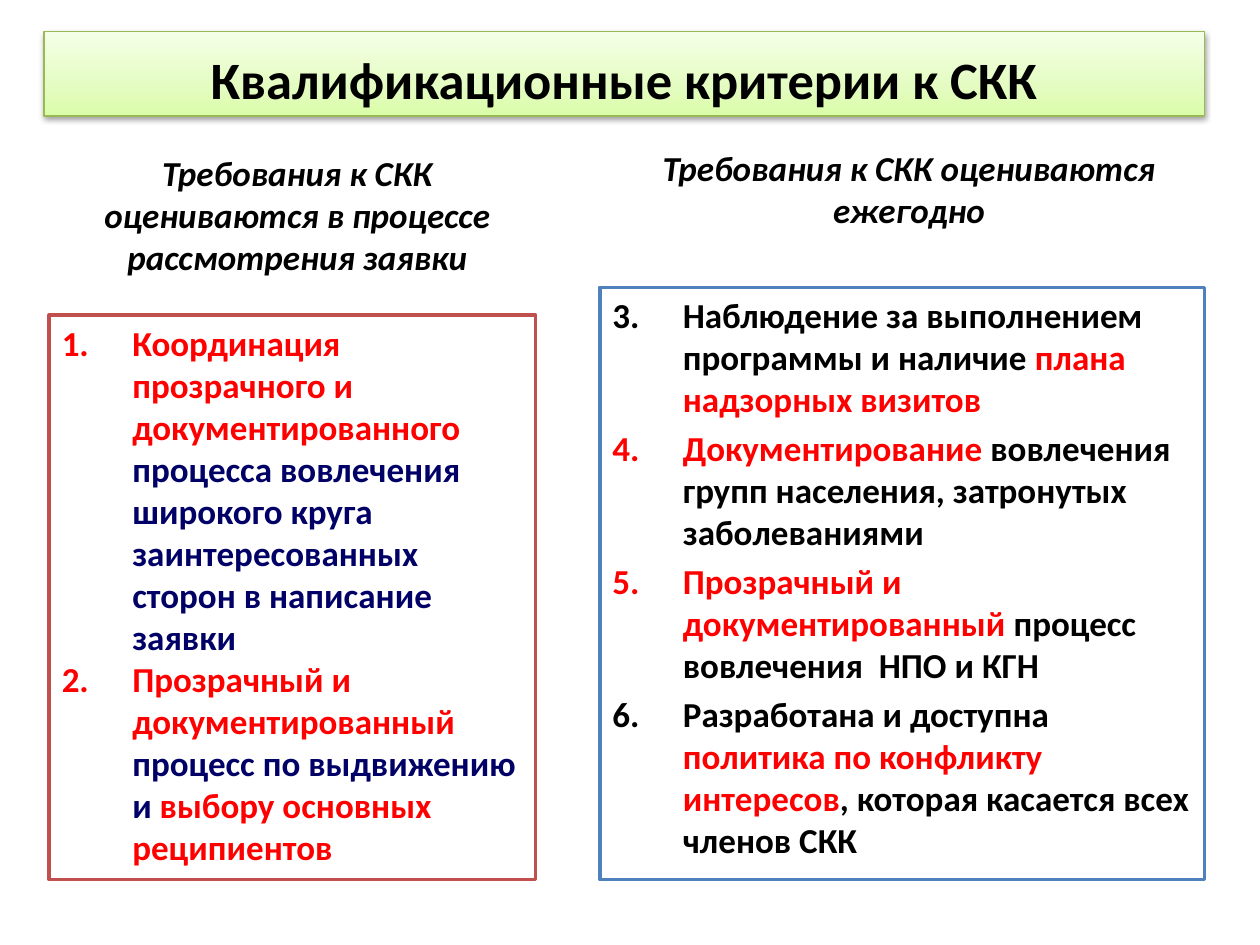
from lxml.etree import SubElement
from pptx import Presentation
from pptx.dml.color import RGBColor
from pptx.enum.text import MSO_ANCHOR, MSO_AUTO_SIZE, PP_ALIGN
from pptx.oxml import parse_xml
from pptx.oxml.ns import nsdecls, qn
from pptx.util import Inches, Pt

BLACK, RED, NAVY = "000000", "FF0000", "000066"


def paint(color, code):
    color.rgb = RGBColor.from_string(code)


def place(shape, box):
    shape.left, shape.top, shape.width, shape.height = map(Inches, box)
    frame = shape.text_frame
    frame.word_wrap = True
    frame.auto_size = MSO_AUTO_SIZE.NONE
    frame.vertical_anchor = MSO_ANCHOR.TOP
    return frame


def border(shape, code, width):
    paint(shape.line.color, code)
    shape.line.width = Pt(width)


def add_run(para, text, size=20, code=BLACK, italic=False):
    run = para.add_run()
    run.text = text
    font = run.font
    font.name, font.size = "Calibri", Pt(size)
    font.bold, font.italic = True, italic
    paint(font.color, code)


def add_title(shape, box, text):
    frame = place(shape, box)
    frame.vertical_anchor = MSO_ANCHOR.BOTTOM
    frame.margin_left = frame.margin_right = 0
    para = frame.paragraphs[0]
    para.alignment = PP_ALIGN.CENTER
    add_run(para, text, 30)

    # Green gradient rising from the bottom edge
    props = shape.element.spPr
    stops = "".join(
        f'<a:gs pos="{pos * 1000}"><a:srgbClr val="{code}"/></a:gs>'
        for pos, code in ((0, "DAFDA7"), (35, "E4FCC2"), (100, "F5FFE7")))
    props.append(parse_xml(
        f'<a:gradFill {nsdecls("a")} rotWithShape="1"><a:gsLst>{stops}</a:gsLst>'
        '<a:lin ang="16200000" scaled="0"/></a:gradFill>'))
    border(shape, "98B955", 0.75)

    # Soft shadow below
    props.append(parse_xml(
        f'<a:effectLst {nsdecls("a")}><a:outerShdw blurRad="{Pt(3.1)}" '
        f'dist="{Pt(1.6)}" dir="5400000" rotWithShape="0"><a:srgbClr val="000000">'
        '<a:alpha val="38000"/></a:srgbClr></a:outerShdw></a:effectLst>'))


def add_head(shape, box, text):
    para = place(shape, box).paragraphs[0]
    para.alignment = PP_ALIGN.CENTER
    para.space_before = Pt(0)
    add_run(para, text, italic=True)


def add_list(shape, box, edge, items, start, gap):
    frame = place(shape, box)
    shape.fill.solid()
    paint(shape.fill.fore_color, "FFFFFF")
    border(shape, edge, 2)
    for i, item in enumerate(items):
        para = frame.add_paragraph() if i else frame.paragraphs[0]
        para.space_before = Pt(gap)
        # Hanging number
        props = para._p.get_or_add_pPr()
        props.set("marL", str(Inches(0.56)))
        props.set("indent", str(-Inches(0.56)))
        SubElement(props, qn("a:buFont"), typeface="+mj-lt")
        SubElement(props, qn("a:buAutoNum"), type="arabicPeriod", startAt=str(start))
        for text, code in item:
            add_run(para, text, code=code)


def main():
    deck = Presentation()
    deck.slide_width, deck.slide_height = Inches(10), Inches(7.5)
    slide = deck.slides.add_slide(deck.slide_layouts.get_by_name("Comparison"))
    title, head1, list1, head2, list2 = slide.placeholders

    add_title(title, (0.35, 0.25, 9.21, 0.67), "Квалификационные критерии к СКК")

    # Left column: application review
    add_head(head1, (0.43, 1.15, 3.86, 1.11),
             "Требования к СКК оцениваются в процессе рассмотрения заявки")
    add_list(list1, (0.39, 2.5, 3.86, 4.48), "C0504D", [
        [("Координация прозрачного и документированного ", RED),
         ("процесса вовлечения широкого круга заинтересованных сторон "
          "в написание заявки", NAVY)],
        [("Прозрачный и документированный ", RED),
         ("процесс по выдвижению и ", NAVY),
         ("выбору основных реципиентов", RED)],
    ], start=1, gap=0)

    # Right column: yearly review
    add_head(head2, (4.93, 1.11, 4.57, 1.08),
             "Требования к СКК оцениваются ежегодно")
    add_list(list2, (4.76, 2.28, 4.8, 4.7), "4F81BD", [
        [("Наблюдение за выполнением программы и наличие ", BLACK),
         ("плана надзорных визитов", RED)],
        [("Документирование ", RED),
         ("вовлечения групп населения, затронутых заболеваниями", BLACK)],
        [("Прозрачный и документированный ", RED),
         ("процесс вовлечения  НПО и КГН", BLACK)],
        [("Разработана и доступна", BLACK),
         (" политика по конфликту интересов", RED),
         (", которая касается всех членов СКК", BLACK)],
    ], start=3, gap=4)

    deck.save("out.pptx")


if __name__ == "__main__":
    main()
